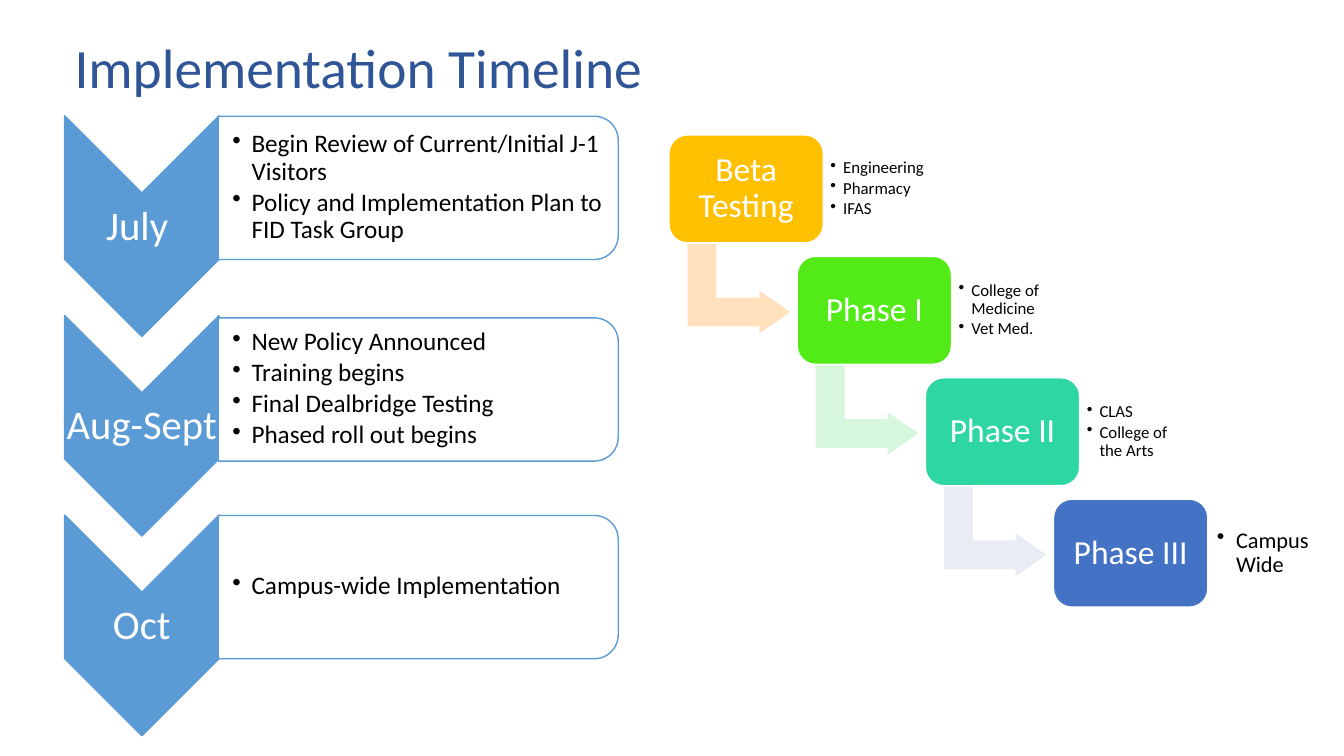
from dataclasses import dataclass

from lxml.etree import SubElement
from pptx import Presentation
from pptx.dml.color import RGBColor
from pptx.enum.shapes import MSO_SHAPE
from pptx.enum.text import MSO_ANCHOR, PP_ALIGN
from pptx.oxml.ns import qn
from pptx.util import Cm, Pt


@dataclass(frozen=True)
class Theme:
    font: str = "Calibri"
    title: str = "2F5597"
    month: str = "5B9BD5"
    ink: str = "000000"
    white: str = "FFFFFF"
    title_size: float = 39.6
    month_size: float = 29
    phase_size: float = 24
    task_size: float = 18
    final_size: float = 16
    unit_size: float = 12


THEME = Theme()

# Month, top of its panel in cm, tasks
MONTHS = [
    ("July ", 2.93, ["Begin Review of Current/Initial J-1 Visitors",
                     "Policy and Implementation Plan to FID Task Group"]),
    ("Aug-Sept", 8.01, ["New Policy Announced", "Training begins",
                        "Final Dealbridge Testing", "Phased roll out begins"]),
    ("Oct", 12.99, ["Campus-wide Implementation"]),
]

# Phase, box colour, colour of the arrow to the next phase, units
PHASES = [
    ("Beta Testing", "FFC000", "FFE2BD", ["Engineering", "Pharmacy", "IFAS"]),
    ("Phase I", "53EB17", "D6F7DB", ["College of Medicine", "Vet Med."]),
    ("Phase II", "2ED7A1", "E9ECF5", ["CLAS", "College of the Arts"]),
    ("Phase III", "4472C4", None, ["Campus Wide"]),
]


def write(frame, lines, *, size, color=THEME.ink, align=PP_ALIGN.LEFT,
          margins=(0.25, 0.13, 0.25, 0.13), after=0.0, indent=None):
    """Fill a text frame; margins (left, top, right, bottom) and indent in cm."""
    frame.word_wrap = True
    frame.vertical_anchor = MSO_ANCHOR.MIDDLE
    (frame.margin_left, frame.margin_top,
     frame.margin_right, frame.margin_bottom) = map(Cm, margins)
    for index, line in enumerate(lines):
        paragraph = frame.add_paragraph() if index else frame.paragraphs[0]
        if indent:
            paragraph.level = 1
            properties = paragraph._p.get_or_add_pPr()
            properties.set("marL", str(Cm(indent)))
            properties.set("indent", str(-Cm(indent)))
            SubElement(properties, qn("a:buChar")).set("char", "•")
        paragraph.alignment = align
        paragraph.line_spacing = 0.9
        paragraph.space_after = Pt(round(size * after, 1))
        run = paragraph.add_run()
        run.text = line
        run.font.name = THEME.font
        run.font.size = Pt(size)
        run.font.color.rgb = RGBColor.from_string(color)


def add_text(slide, left, top, width, height, lines, **text_format):
    box = slide.shapes.add_textbox(Cm(left), Cm(top), Cm(width), Cm(height))
    write(box.text_frame, lines, **text_format)


def add_block(slide, preset, left, top, width, height, *, fill, line,
              turned=False, adjustments=()):
    """Add a preset shape; a turned one covers the given area after 90 degrees."""
    if turned:
        left, top = left + (width - height) / 2, top + (height - width) / 2
        width, height = height, width
    block = slide.shapes.add_shape(preset, Cm(left), Cm(top), Cm(width), Cm(height))
    block.rotation = 90 if turned else 0
    block.shadow.inherit = False
    for index, value in enumerate(adjustments):
        block.adjustments[index] = value
    block.fill.solid()
    block.fill.fore_color.rgb = RGBColor.from_string(fill)
    block.line.color.rgb = RGBColor.from_string(line)
    block.line.width = Pt(1)
    return block


def add_month(slide, index, month, panel_top, tasks):
    left, top, width = 1.63, 2.92 + index * 5.03, 3.89
    add_block(slide, MSO_SHAPE.CHEVRON, left, top, width, 5.56,
              fill=THEME.month, line=THEME.month, turned=True)
    add_text(slide, left, top + 1.96, width, 1.68, [month],
             size=THEME.month_size, color=THEME.white, align=PP_ALIGN.CENTER,
             margins=(0.05,) * 4, after=0.35)

    panel = add_block(slide, MSO_SHAPE.ROUND_2_SAME_RECTANGLE,
                      5.5, panel_top, 10.08, 3.61,
                      fill=THEME.white, line=THEME.month, turned=True)
    panel_color = panel._element.spPr.find(qn("a:solidFill"))[0]
    SubElement(panel_color, qn("a:alpha")).set("val", "90000")
    add_text(slide, 5.5, panel_top + 0.17, 9.91, 3.25, tasks,
             size=THEME.task_size, margins=(0.36, 0.03, 0.03, 0.03),
             after=0.15, indent=0.48)


def add_phase(slide, index, phase, color, arrow_color, units):
    left, top, width, height = 16.86 + index * 3.23, 3.4 + index * 3.06, 3.89, 2.72
    if arrow_color:
        add_block(slide, MSO_SHAPE.BENT_UP_ARROW, left + 0.45, top + 2.73, 2.64, 2.31,
                  fill=arrow_color, line=THEME.white, turned=True,
                  adjustments=(0.33, 0.25, 0.36))
    step = add_block(slide, MSO_SHAPE.ROUNDED_RECTANGLE, left, top, width, height,
                     fill=color, line=THEME.white, adjustments=(0.17,))
    write(step.text_frame, [phase], size=THEME.phase_size, color=THEME.white,
          align=PP_ALIGN.CENTER, margins=(0.25,) * 4, after=0.35)

    # The last phase has larger notes
    if arrow_color:
        size, margin, indent = THEME.unit_size, 0.18, 0.32
    else:
        size, margin, indent = THEME.final_size, 0.23, 0.48
    add_text(slide, left + width, top + 0.25, 2.82, 2.21, units, size=size,
             margins=(margin,) * 4, after=0.15, indent=indent)


def main():
    deck = Presentation()
    deck.slide_width, deck.slide_height = Cm(33.87), Cm(19.05)
    slide = deck.slides.add_slide(deck.slide_layouts[6])

    # Title
    add_text(slide, 1.63, 0.84, 29.21, 1.9, ["Implementation Timeline"],
             size=THEME.title_size, color=THEME.title)

    # Months, from top to bottom
    for index, month in enumerate(MONTHS):
        add_month(slide, index, *month)

    # Phases, as descending stairs
    for index, phase in enumerate(PHASES):
        add_phase(slide, index, *phase)

    deck.save("out.pptx")


if __name__ == "__main__":
    main()
